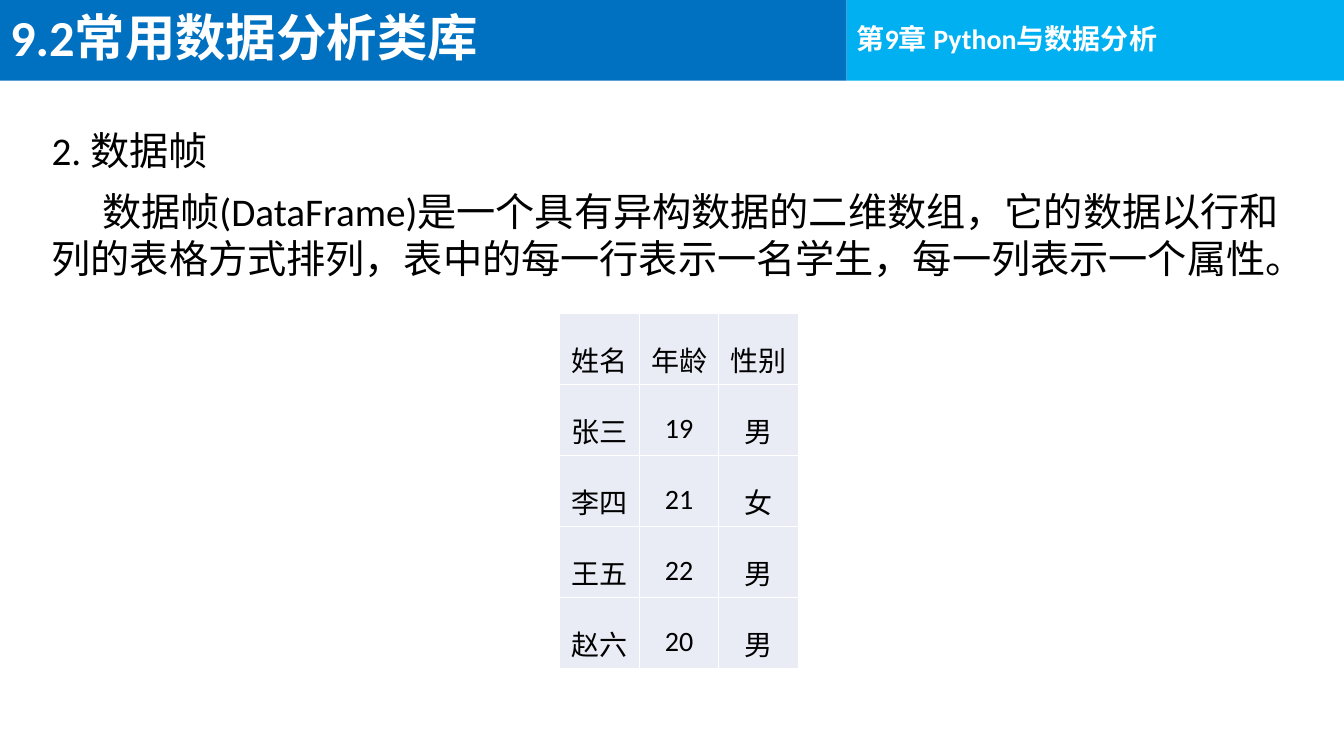
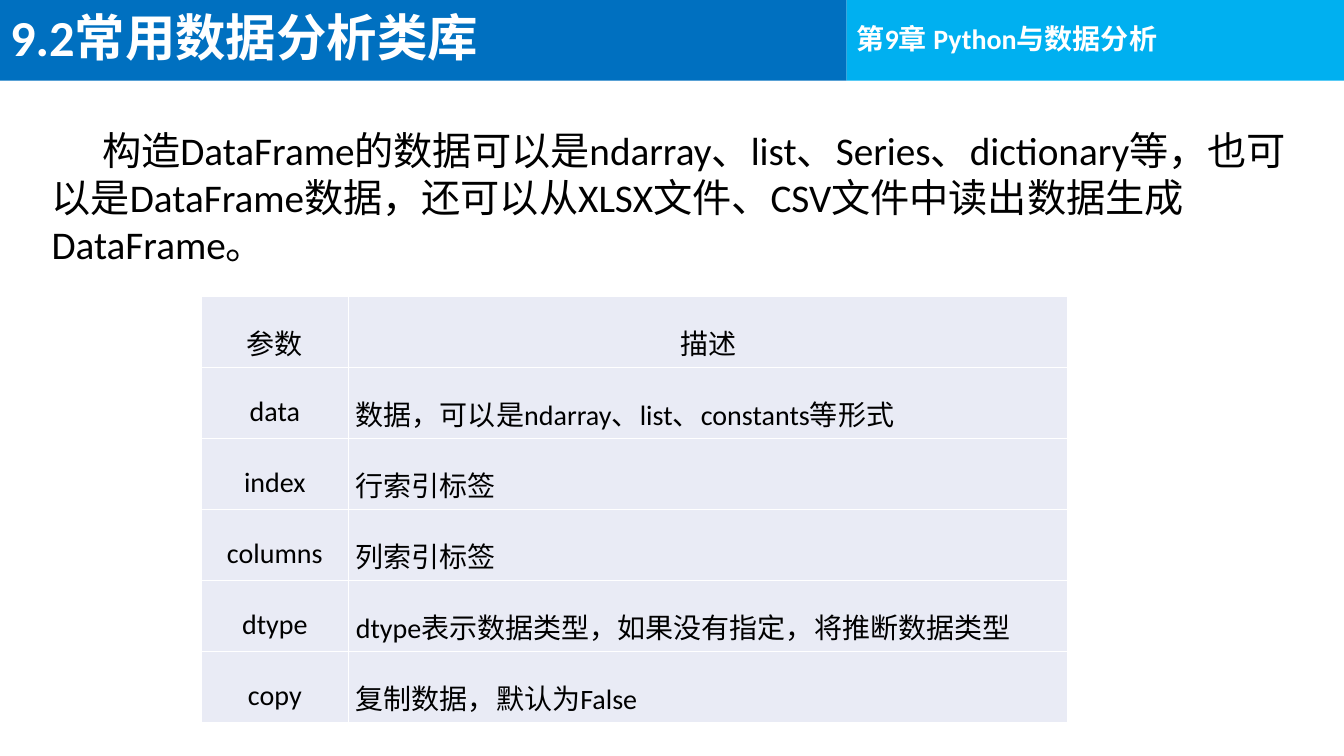
"""Build two lecture slides about data frames, each with a title band, body text and a table."""
from dataclasses import dataclass
from typing import Any

import pptx
import pptx.dml.color
import pptx.enum.lang
import pptx.enum.shapes
import pptx.enum.text
import pptx.oxml
import pptx.oxml.ns
import pptx.util

SLIDE_W, SLIDE_H = pptx.util.Inches(13.33), pptx.util.Inches(7.5)
FONT = "Calibri"
BLACK, WHITE = "000000", "FFFFFF"
TITLE_BLUE, CHAPTER_BLUE, CELL_FILL = "0070C0", "00B0F0", "E9EBF5"
TITLE_SHARE, BAND_SHARE, ROW_SHARE = 63, 10.67, 9.39
TITLE = "9.2常用数据分析类库"
CHAPTER = "第9章 Python与数据分析"
LEFT, CENTER = pptx.enum.text.PP_ALIGN.LEFT, pptx.enum.text.PP_ALIGN.CENTER


@dataclass
class Body:
    text: str
    indent: float = 0.5


@dataclass
class Grid:
    left: float
    top: float
    cols: list[float]
    rows: list[list[str]]
    text_cols: tuple[int, ...] = ()


@dataclass
class Page:
    body: list[Body]
    grid: Grid


PAGES = [
    Page(
        [
            Body("2. 数据帧", 0),
            Body("数据帧(DataFrame)是一个具有异构数据的二维数组，它的数据以行和列的表格方式排列，"
                 "表中的每一行表示一名学生，每一列表示一个属性。"),
        ],
        Grid(41.65, 41.5, [5.92] * 3, [
            ["姓名", "年龄", "性别"],
            ["张三", "19", "男"],
            ["李四", "21", "女"],
            ["王五", "22", "男"],
            ["赵六", "20", "男"],
        ]),
    ),
    Page(
        [
            Body("构造DataFrame的数据可以是ndarray、list、Series、dictionary等，也可以是DataFrame数据，"
                 "还可以从XLSX文件、CSV文件中读出数据生成DataFrame。"),
        ],
        Grid(14.95, 39.25, [11, 53.5], [
            ["参数", "描述"],
            ["data", "数据，可以是ndarray、list、constants等形式"],
            ["index", "行索引标签"],
            ["columns", "列索引标签"],
            ["dtype", "dtype表示数据类型，如果没有指定，将推断数据类型"],
            ["copy", "复制数据，默认为False"],
        ], text_cols=(1,)),
    ),
]


def px(share: float) -> int:
    """Turn a percentage of the slide width into a length."""
    return int(SLIDE_W * share / 100)


def py(share: float) -> int:
    """Turn a percentage of the slide height into a length."""
    return int(SLIDE_H * share / 100)


def rgb(value: str) -> pptx.dml.color.RGBColor:
    """Turn a hex string into a colour."""
    return pptx.dml.color.RGBColor.from_string(value)


def write(p: Any, text: str, *, size: float, color: str = BLACK, bold: bool = False,
          align: Any = LEFT, spacing: float = 1.0, before: float = 0, indent: float = 0) -> None:
    """Write formatted text into a paragraph."""
    p.alignment, p.line_spacing, p.space_before = align, spacing, pptx.util.Pt(before)
    if indent:
        p._p.get_or_add_pPr().set("indent", str(pptx.util.Inches(indent)))
    r = p.add_run()
    r.text = text
    r.font.name, r.font.size, r.font.bold = FONT, pptx.util.Pt(size), bold
    r.font.color.rgb = rgb(color)
    r.font.language_id = pptx.enum.lang.MSO_LANGUAGE_ID.SIMPLIFIED_CHINESE


def fill_band(sp: Any, text: str, fill: str, size: float) -> None:
    """Give a header band its fill and its white bold text."""
    sp.fill.solid()
    sp.fill.fore_color.rgb = rgb(fill)
    sp.line.fill.background()
    tf = sp.text_frame
    tf.word_wrap = True
    tf.auto_size = pptx.enum.text.MSO_AUTO_SIZE.NONE
    tf.vertical_anchor = pptx.enum.text.MSO_ANCHOR.MIDDLE
    write(tf.paragraphs[0], text, size=size, color=WHITE, bold=True, spacing=0.9)


def add_header(s: Any) -> None:
    """Add the chapter band and place the title band."""
    sp = s.shapes.add_shape(pptx.enum.shapes.MSO_SHAPE.RECTANGLE,
                            px(TITLE_SHARE), 0, px(100 - TITLE_SHARE), py(BAND_SHARE))
    sp.shadow.inherit = False
    fill_band(sp, CHAPTER, CHAPTER_BLUE, 20)
    title = s.shapes.title
    title.left, title.top, title.width, title.height = 0, 0, px(TITLE_SHARE), py(BAND_SHARE)
    fill_band(title, TITLE, TITLE_BLUE, 36)


def add_body(s: Any, body: list[Body]) -> None:
    """Add the running text below the header."""
    tf = s.shapes.add_textbox(px(3.1), py(16), px(94.9), py(74)).text_frame
    tf.word_wrap = True
    for i, item in enumerate(body):
        p = tf.add_paragraph() if i else tf.paragraphs[0]
        write(p, item.text, size=28, before=10, indent=item.indent)


def set_borders(cell: Any, color: str, width: float) -> None:
    """Draw the four borders of a cell."""
    tcPr = cell._tc.get_or_add_tcPr()
    ns = pptx.oxml.ns.nsdecls("a")
    for i, side in enumerate(("lnL", "lnR", "lnT", "lnB")):
        tcPr.insert(i, pptx.oxml.parse_xml(
            f'<a:{side} {ns} w="{pptx.util.Pt(width)}"><a:solidFill>'
            f'<a:srgbClr val="{color}"/></a:solidFill></a:{side}>'))


def add_grid(s: Any, grid: Grid) -> None:
    """Add a table with evenly tinted cells."""
    n = len(grid.rows)
    table = s.shapes.add_table(n, len(grid.cols), px(grid.left), py(grid.top),
                               px(sum(grid.cols)), py(ROW_SHARE * n)).table
    table.first_row = table.horz_banding = False
    for column, width in zip(table.columns, grid.cols):
        column.width = px(width)
    for i, row in enumerate(grid.rows):
        table.rows[i].height = py(ROW_SHARE)
        for j, text in enumerate(row):
            cell = table.cell(i, j)
            cell.fill.solid()
            cell.fill.fore_color.rgb = rgb(CELL_FILL)
            cell.margin_left = cell.margin_right = pptx.util.Inches(0.07)
            cell.vertical_anchor = pptx.enum.text.MSO_ANCHOR.MIDDLE
            set_borders(cell, WHITE, 1)
            align = LEFT if i and j in grid.text_cols else CENTER
            write(cell.text_frame.paragraphs[0], text, size=20, align=align, spacing=1.5)


def main() -> None:
    """Build and save the slides."""
    prs = pptx.Presentation()
    prs.slide_width, prs.slide_height = SLIDE_W, SLIDE_H
    for page in PAGES:
        s = prs.slides.add_slide(prs.slide_layouts.get_by_name("Title Only"))
        add_header(s)
        add_body(s, page.body)
        add_grid(s, page.grid)
    prs.save("out.pptx")


if __name__ == "__main__":
    main()
